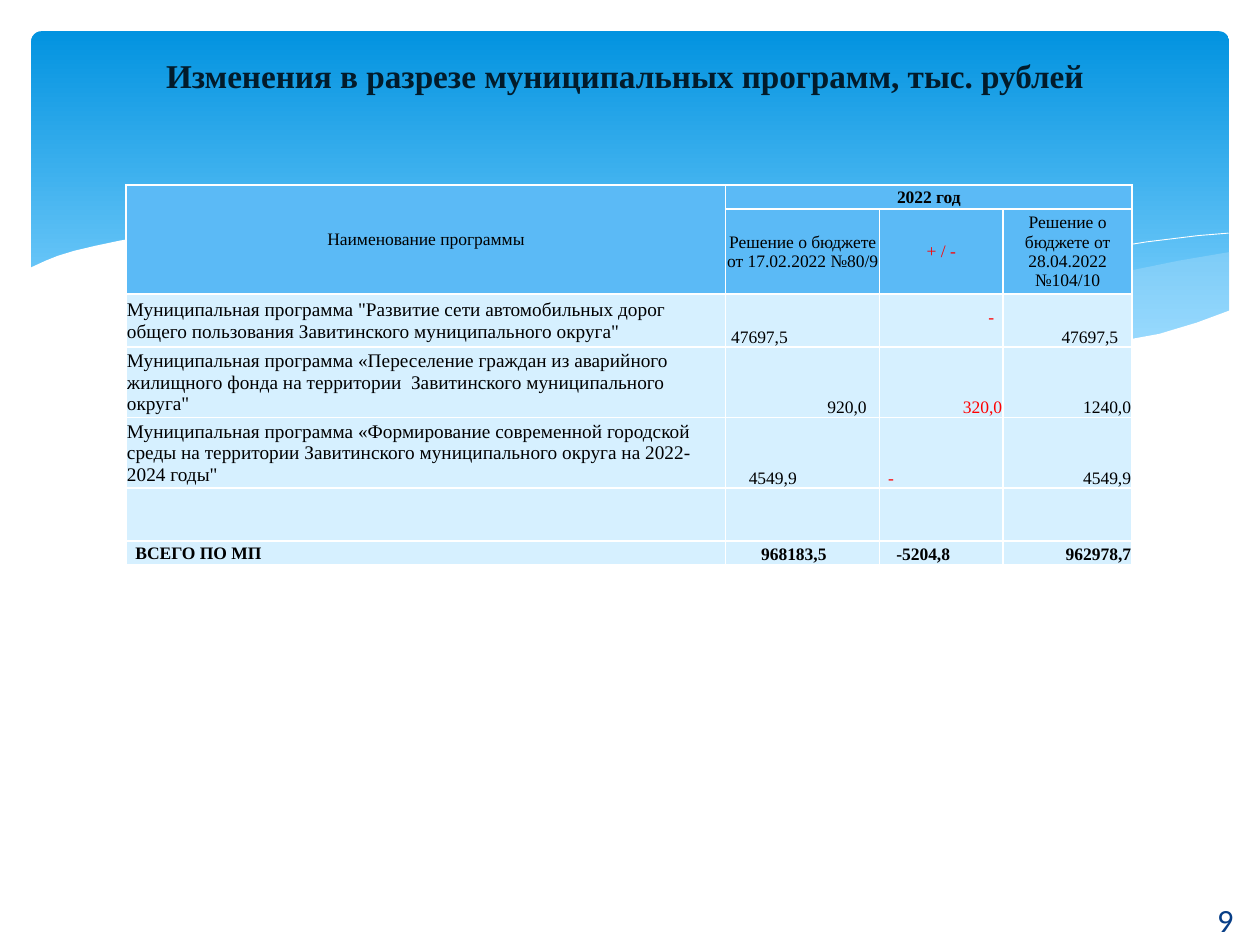
import pptx
import pptx.util
import pptx.dml.color
import pptx.enum.shapes
import pptx.enum.text
import pptx.oxml
import pptx.oxml.ns

Cm, Pt = pptx.util.Cm, pptx.util.Pt
RGBColor = pptx.dml.color.RGBColor
ALIGN = pptx.enum.text.PP_ALIGN
ANCHOR = pptx.enum.text.MSO_ANCHOR

WHITE = RGBColor(0xFF, 0xFF, 0xFF)
BLACK = RGBColor(0, 0, 0)
RED = RGBColor(0xFF, 0, 0)
SKY_TOP = RGBColor(0x02, 0x93, 0xE0)
SKY_BOTTOM = RGBColor(0x83, 0xD3, 0xFE)
MIST = RGBColor(0xC6, 0xE7, 0xFC)
HEADER_BLUE = RGBColor(0x5B, 0xBA, 0xF6)
BODY_BLUE = RGBColor(0xD6, 0xF0, 0xFF)
TITLE_INK = RGBColor(0x02, 0x1B, 0x2B)
NUMBER_INK = RGBColor(0x07, 0x3E, 0x87)
SERIF = "Times New Roman"

# Content
TITLE = "Изменения в разрезе муниципальных программ, тыс. рублей"
PAGE_NUMBER = "9"
NAME_HEADER, YEAR_HEADER = "Наименование программы", "2022 год"
COLUMN_HEADERS = ["Решение о бюджете от 17.02.2022 №80/9", "+ / -",
                  "Решение о бюджете от 28.04.2022 №104/10"]
# Program name, then (value, right inset in cm) for each column
PROGRAMS = [
    ('Муниципальная программа "Развитие сети автомобильных дорог общего '
     'пользования Завитинского муниципального округа"',
     [("47697,5", 1.85), ("-", 0.18), ("47697,5", 0.28)]),
    ('Муниципальная программа «Переселение граждан из аварийного жилищного '
     'фонда на территории  Завитинского муниципального округа"',
     [("920,0", 0.26), ("320,0", 0.02), ("1240,0", 0.02)]),
    ('Муниципальная программа «Формирование современной городской среды на '
     'территории Завитинского муниципального округа на 2022-2024 годы"',
     [("4549,9", 1.67), ("-", 2.2), ("4549,9", 0.02)]),
    ("", [("", 0.02)] * 3),
]
TOTAL = ("ВСЕГО ПО МП", [("968183,5", 1.07), ("-5204,8", 1.07), ("962978,7", 0.02)])
COLUMN_WIDTHS = [12.09, 3.1, 2.49, 2.6]
ROW_HEIGHTS = [0.48, 1.58, 1.07, 1.32, 1.32, 1.07, 0.48]

# Wave outlines, in hundredths of an inch: points, fill, opacity in %, closed
WAVES = [
    ([(976, 200), (935, 207), (891, 216), (832, 230), (779, 242), (729, 253),
      (661, 265), (691, 269), (732, 274), (769, 277), (803, 278), (844, 277),
      (881, 273), (913, 267), (942, 259), (963, 252), (976, 247)], MIST, 29, True),
    ([(893, 273), (837, 265), (775, 254), (706, 240), (629, 222), (569, 208),
      (514, 198), (465, 191), (420, 187), (380, 185), (344, 186), (313, 188),
      (286, 191), (342, 199), (404, 211), (449, 222), (530, 240), (601, 255),
      (665, 266), (722, 274), (773, 277), (818, 278), (857, 277), (893, 273)],
     MIST, 40, True),
    ([(309, 195), (335, 191), (374, 188), (416, 187), (469, 189), (533, 194),
      (582, 200), (636, 208), (695, 219), (760, 233), (831, 251), (907, 272)],
     None, 100, False),
    ([(613, 257), (653, 246), (695, 235), (748, 223), (806, 210), (866, 199),
      (910, 192), (951, 187), (975, 185)], None, 100, False),
    ([(977, 246), (950, 256), (920, 265), (887, 271), (850, 275), (809, 277),
      (761, 275), (708, 270), (648, 262), (579, 250), (503, 233), (447, 220),
      (391, 207), (340, 197), (292, 190), (250, 186), (211, 184), (177, 184),
      (146, 185), (119, 187), (95, 191), (76, 195), (59, 199), (46, 203),
      (36, 207), (23, 213), (23, 329), (977, 329)], WHITE, 100, True),
]


def write(frame, text, align, **font):
    para = frame.paragraphs[0]
    para.alignment = align
    span = para.add_run()
    span.text = text
    span.font.color.rgb = font.pop("color")
    for name, value in font.items():
        setattr(span.font, name, value)


def set_values(target, **values):
    for name, value in values.items():
        setattr(target, name, value)


def add_wave(page, points, fill, opacity, closed):
    builder = page.shapes.build_freeform(*points[0], scale=Cm(0.0254))
    builder.add_line_segments(points[1:], close=closed)
    wave = builder.convert_to_shape()
    wave.shadow.inherit = False
    if fill is None:
        wave.fill.background()
        wave.line.color.rgb = WHITE
        wave.line.width = Pt(0.5)
        return
    wave.line.fill.background()
    wave.fill.solid()
    wave.fill.fore_color.rgb = fill
    if opacity < 100:
        color = wave.fill._xPr.find(".//" + pptx.oxml.ns.qn("a:srgbClr"))
        color.append(pptx.oxml.parse_xml(
            f'<a:alpha {pptx.oxml.ns.nsdecls("a")} val="{opacity * 1000}"/>'))


def add_borders(cell, sides):
    properties = cell._tc.get_or_add_tcPr()
    for place, side in enumerate(sides):
        properties.insert(place, pptx.oxml.parse_xml(
            f'<a:ln{side} {pptx.oxml.ns.nsdecls("a")} w="12700"><a:solidFill>'
            f'<a:srgbClr val="{WHITE}"/></a:solidFill></a:ln{side}>'))


def fill_cell(cell, text, fill, align, anchor=ANCHOR.MIDDLE, left=0.02, right=0.02,
              bottom=0, size=10, color=BLACK, bold=False):
    set_values(cell, margin_left=Cm(left), margin_right=Cm(right), margin_top=Cm(0.02),
               margin_bottom=Cm(bottom), vertical_anchor=anchor)
    cell.fill.solid()
    cell.fill.fore_color.rgb = fill
    if text:
        write(cell.text_frame, text, align, name=SERIF, size=Pt(size), color=color, bold=bold)


def add_program_table(page):
    frame = page.shapes.add_table(len(ROW_HEIGHTS), len(COLUMN_WIDTHS), Cm(2.54), Cm(3.73),
                                  Cm(sum(COLUMN_WIDTHS)), Cm(sum(ROW_HEIGHTS)))
    table = frame.table
    set_values(table, first_row=False, horz_banding=False)
    for column, width in zip(table.columns, COLUMN_WIDTHS):
        column.width = Cm(width)
    for row, height in zip(table.rows, ROW_HEIGHTS):
        row.height = Cm(height)
    table.cell(0, 0).merge(table.cell(1, 0))
    table.cell(0, 1).merge(table.cell(0, 3))

    # Header rows
    fill_cell(table.cell(0, 0), NAME_HEADER, HEADER_BLUE, ALIGN.CENTER)
    fill_cell(table.cell(0, 1), YEAR_HEADER, HEADER_BLUE, ALIGN.CENTER, bold=True)
    for column, text in enumerate(COLUMN_HEADERS, 1):
        fill_cell(table.cell(1, column), text, HEADER_BLUE, ALIGN.CENTER,
                  color=RED if column == 2 else BLACK)

    # Programs and total
    for row, (name, values) in enumerate(PROGRAMS + [TOTAL], 2):
        total = name == TOTAL[0]
        fill_cell(table.cell(row, 0), name, BODY_BLUE, ALIGN.LEFT, bold=total,
                  size=10 if total else 11, left=0.19 if total else 0.02)
        for column, (value, inset) in enumerate(values, 1):
            raised = row == 2 and column == 2
            fill_cell(table.cell(row, column), value, BODY_BLUE, ALIGN.RIGHT, ANCHOR.BOTTOM,
                      right=inset, bottom=0.39 if raised else 0, bold=total,
                      color=RED if column == 2 and not total else BLACK)

    for row in range(len(ROW_HEIGHTS)):
        for column in range(len(COLUMN_WIDTHS)):
            under_year = row == 0 and column > 0
            sides = ("LB" if column == 1 else "B") if under_year else "LRTB"
            add_borders(table.cell(row, column), sides)


def main():
    deck = pptx.Presentation()
    set_values(deck, slide_width=Cm(25.4), slide_height=Cm(19.05))
    page = deck.slides.add_slide(deck.slide_layouts[5])
    title = page.shapes.title

    # Sky panel and waves
    sky = page.shapes.add_shape(pptx.enum.shapes.MSO_SHAPE.ROUNDED_RECTANGLE,
                                Cm(0.63), Cm(0.63), Cm(24.15), Cm(6.86))
    sky.adjustments[0] = 0.03
    sky.shadow.inherit = False
    sky.line.fill.background()
    sky.fill.gradient()
    sky.fill.gradient_angle = 270
    for stop, color, position in zip(sky.fill.gradient_stops, (SKY_TOP, SKY_BOTTOM), (0, 0.9)):
        stop.color.rgb = color
        stop.position = position
    for wave in WAVES:
        add_wave(page, *wave)

    # Title, brought in front of the panel
    page.shapes._spTree.append(title._element)
    set_values(title, left=Cm(0), top=Cm(0.91), width=Cm(25.4), height=Cm(1.6))
    set_values(title.text_frame, vertical_anchor=ANCHOR.TOP, word_wrap=True,
               auto_size=pptx.enum.text.MSO_AUTO_SIZE.NONE,
               margin_top=Cm(0.2), margin_right=Cm(0.45))
    write(title.text_frame, TITLE, ALIGN.CENTER, name=SERIF, size=Pt(19), bold=True,
          color=TITLE_INK)

    # Page number
    box = page.shapes.add_textbox(Cm(23.9), Cm(18.03), Cm(1.6), Cm(1.02))
    set_values(box.text_frame, word_wrap=True, vertical_anchor=ANCHOR.MIDDLE)
    write(box.text_frame, PAGE_NUMBER, ALIGN.CENTER, name="Calibri", size=Pt(18.5),
          color=NUMBER_INK)

    add_program_table(page)
    deck.save("out.pptx")


if __name__ == "__main__":
    main()
